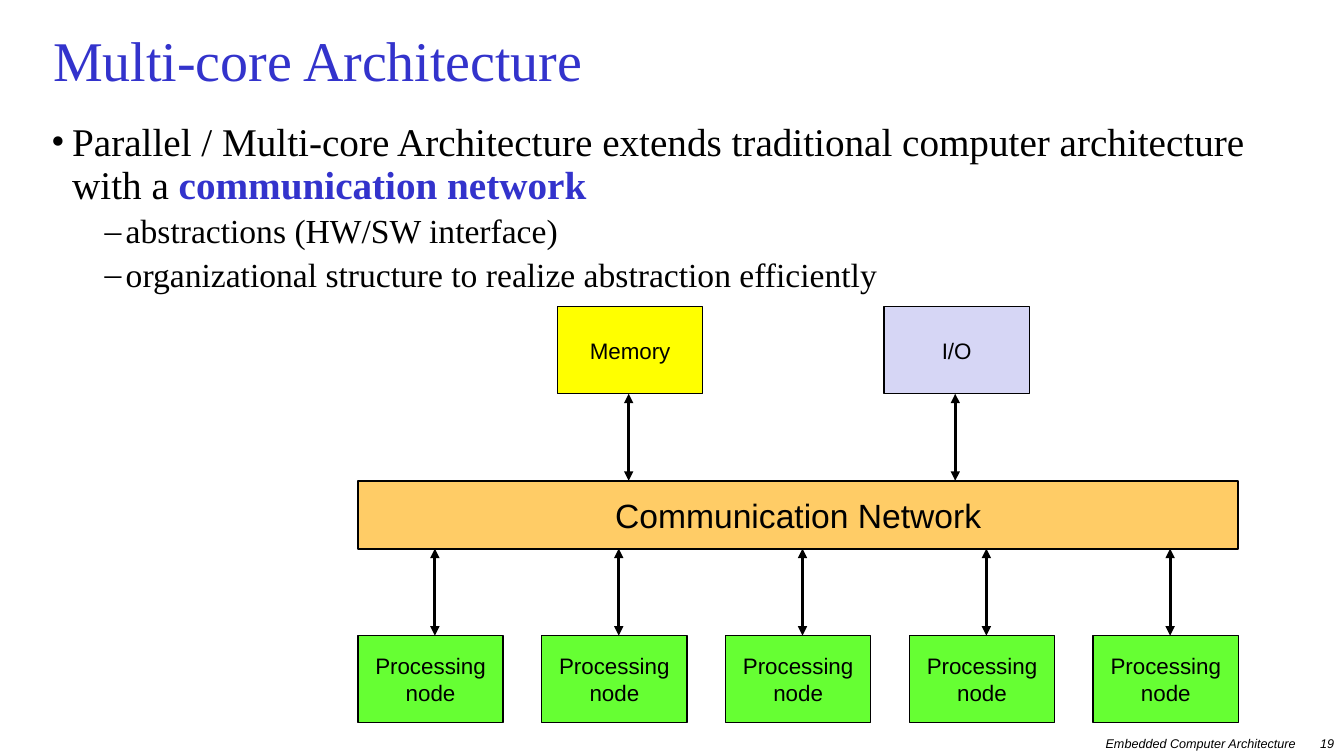
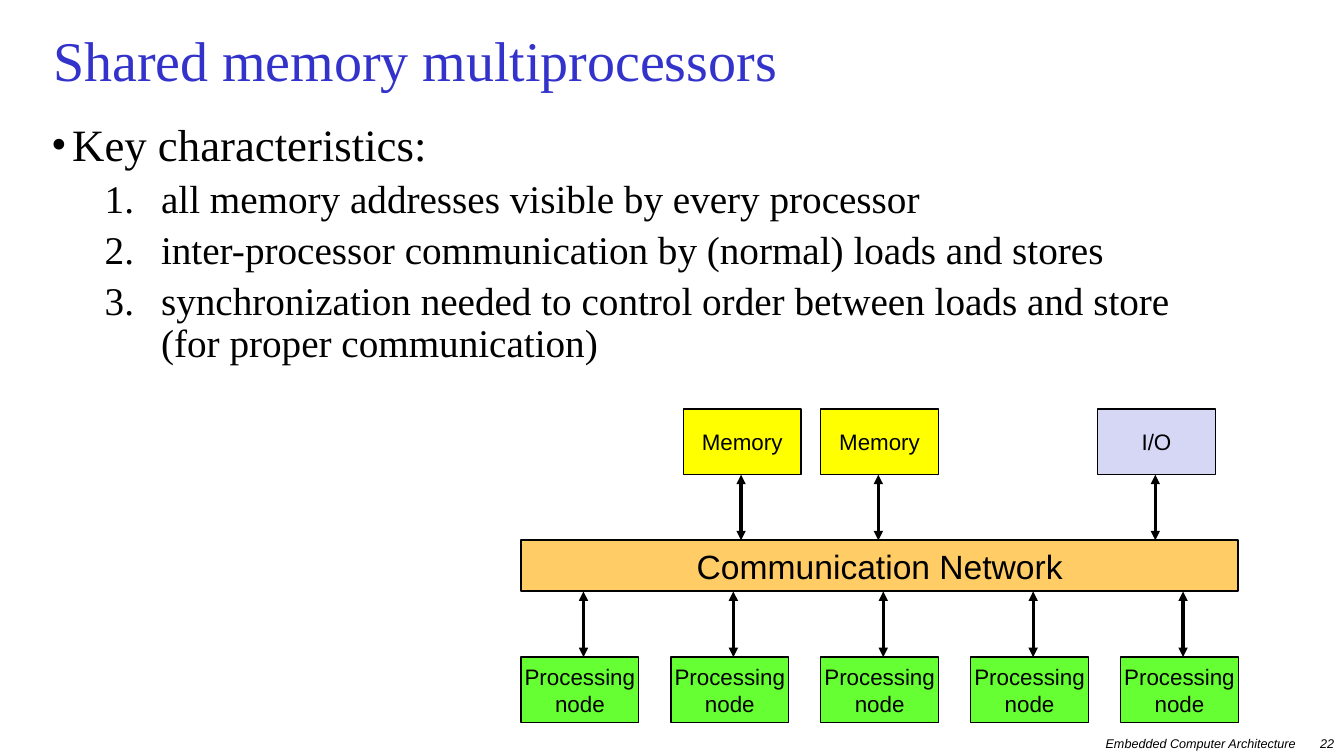
import pptx
import pptx.util
import pptx.dml.color
import pptx.enum.shapes
import pptx.enum.text
import pptx.oxml.ns
import lxml.etree

Cm, Pt = pptx.util.Cm, pptx.util.Pt
ALIGN = pptx.enum.text.PP_ALIGN
ANCHOR = pptx.enum.text.MSO_ANCHOR


def sub(parent, tag, **attrs):
    return lxml.etree.SubElement(parent, pptx.oxml.ns.qn(tag), attrs)


class Deck:
    COLORS = {
        "text": "000000",
        "accent": "3333CC",
        "network": "FFCC66",
        "node": "66FF33",
        "memory": "FFFF00",
        "io": "D6D6F5",
    }
    SERIF, SANS = "Times New Roman", "Arial"
    RIGHT, BOTTOM = 31.21, 18.21
    NODES = 5
    NETWORK_RATIO = 0.78

    def __init__(self):
        self.prs = pptx.Presentation()
        self.prs.slide_width, self.prs.slide_height = Cm(33.87), Cm(19.05)
        self.s = None

    def color(self, name):
        return pptx.dml.color.RGBColor.from_string(self.COLORS[name])

    def style(self, p, size, font, color="text", italic=None):
        p.font.size, p.font.name, p.font.italic = Pt(size), font, italic
        p.font.color.rgb = self.color(color)

    def textbox(self, x, y, w, h):
        tf = self.s.shapes.add_textbox(Cm(x), Cm(y), Cm(w), Cm(h)).text_frame
        tf.word_wrap = True
        return tf

    def slide(self, title, number):
        self.s = self.prs.slides.add_slide(self.prs.slide_layouts[6])
        self.footer("Embedded Computer Architecture", 24.13, 8.77)
        self.footer(str(number), 32.37, 1.5)
        tf = self.textbox(1.09, 0.64, 31.65, 2.03)
        tf.vertical_anchor = ANCHOR.MIDDLE
        p = tf.paragraphs[0]
        p.text, p.line_spacing = title, 0.8
        self.style(p, 40, self.SERIF, "accent")

    def footer(self, text, x, w):
        p = self.textbox(x, 18.42, w, 0.63).paragraphs[0]
        p.text, p.alignment = text, ALIGN.RIGHT
        self.style(p, 9, self.SANS, italic=True)

    def body(self):
        return self.textbox(1.04, 2.97, 31.8, 16.08)

    def bullet(self, tf, text, size, mark="•", level=0, left=0.53, hang=0.53):
        p = tf.paragraphs[0] if not tf.text else tf.add_paragraph()
        p.text, p.level = text, level
        p.line_spacing, p.space_before = 0.9, Pt(size * 0.22)
        ppr = p._p.get_or_add_pPr()
        ppr.set("marL", str(Cm(left)))
        ppr.set("indent", str(-Cm(hang)))
        if mark == "1.":
            sub(ppr, "a:buFont", typeface="+mj-lt")
            sub(ppr, "a:buAutoNum", type="arabicPeriod")
        else:
            sub(ppr, "a:buFont", typeface=self.SERIF)
            sub(ppr, "a:buChar", char=mark)
        self.style(p, size, self.SERIF)
        return p

    def emphasis(self, p, text):
        r = p.add_run()
        r.text, r.font.bold = text, True
        r.font.color.rgb = self.color("accent")

    def box(self, text, fill, x, y, w, h, size=16, line=1):
        sp = self.s.shapes.add_shape(
            pptx.enum.shapes.MSO_SHAPE.RECTANGLE, Cm(x), Cm(y), Cm(w), Cm(h))
        sp.shadow.inherit = False
        sp.fill.solid()
        sp.fill.fore_color.rgb = self.color(fill)
        sp.line.color.rgb, sp.line.width = self.color("text"), Pt(line)
        tf = sp.text_frame
        tf.text, tf.word_wrap = text, False
        tf.vertical_anchor = ANCHOR.MIDDLE
        for p in tf.paragraphs:
            p.alignment = ALIGN.CENTER
            self.style(p, size, self.SANS)

    def arrow(self, x, top, bottom):
        cx = self.s.shapes.add_connector(
            pptx.enum.shapes.MSO_CONNECTOR.STRAIGHT,
            Cm(x), Cm(top), Cm(x), Cm(bottom))
        cx.line.color.rgb, cx.line.width = self.color("text"), Pt(2.25)
        ln = cx.line._get_or_add_ln()
        for end in ("a:headEnd", "a:tailEnd"):
            sub(ln, end, type="triangle")
        sub(cx._element.spPr, "a:effectLst")

    def diagram(self, left, top, box_w, devices):
        unit = (self.BOTTOM - top) / (4 + self.NETWORK_RATIO)
        net_top, node_top = top + 2 * unit, self.BOTTOM - unit
        net_bottom = node_top - unit
        width = self.RIGHT - left
        self.box("Communication Network", "network", left, net_top,
                 width, net_bottom - net_top, size=24, line=1.5)
        pitch = (width - box_w) / (self.NODES - 1)
        for i in range(self.NODES):
            x = left + i * pitch
            self.box("Processing\nnode", "node", x, node_top, box_w, unit)
            self.arrow(x + 0.53 * box_w, net_bottom, node_top)
        for text, fill, x in devices:
            self.box(text, fill, x, top, box_w, unit)
            self.arrow(x + 0.49 * box_w, top + unit, net_top)


def main():
    deck = Deck()

    deck.slide("Multi-core Architecture", 19)
    tf = deck.body()
    p = deck.bullet(tf, "Parallel / Multi-core Architecture extends traditional "
                        "computer architecture with a ", 28)
    deck.emphasis(p, "communication network")
    for text in ("abstractions (HW/SW interface)",
                 "organizational structure to realize abstraction efficiently"):
        deck.bullet(tf, text, 24, "–", level=1, left=1.88)
    deck.diagram(9.02, 7.73, 3.66,
                 [("Memory", "memory", 14.05), ("I/O", "io", 22.28)])

    deck.slide("Shared memory multiprocessors", 22)
    tf = deck.body()
    deck.bullet(tf, "Key characteristics:", 32)
    for text in ("all memory addresses visible by every processor",
                 "inter-processor communication by (normal) loads and stores",
                 "synchronization needed to control order between loads and store"
                 "\v(for proper communication)"):
        deck.bullet(tf, text, 28, "1.", level=1, left=2.77, hang=1.42)
    deck.diagram(13.13, 10.31, 2.97,
                 [("Memory", "memory", 17.22), ("Memory", "memory", 20.68),
                  ("I/O", "io", 27.66)])

    deck.prs.save("out.pptx")


if __name__ == "__main__":
    main()
